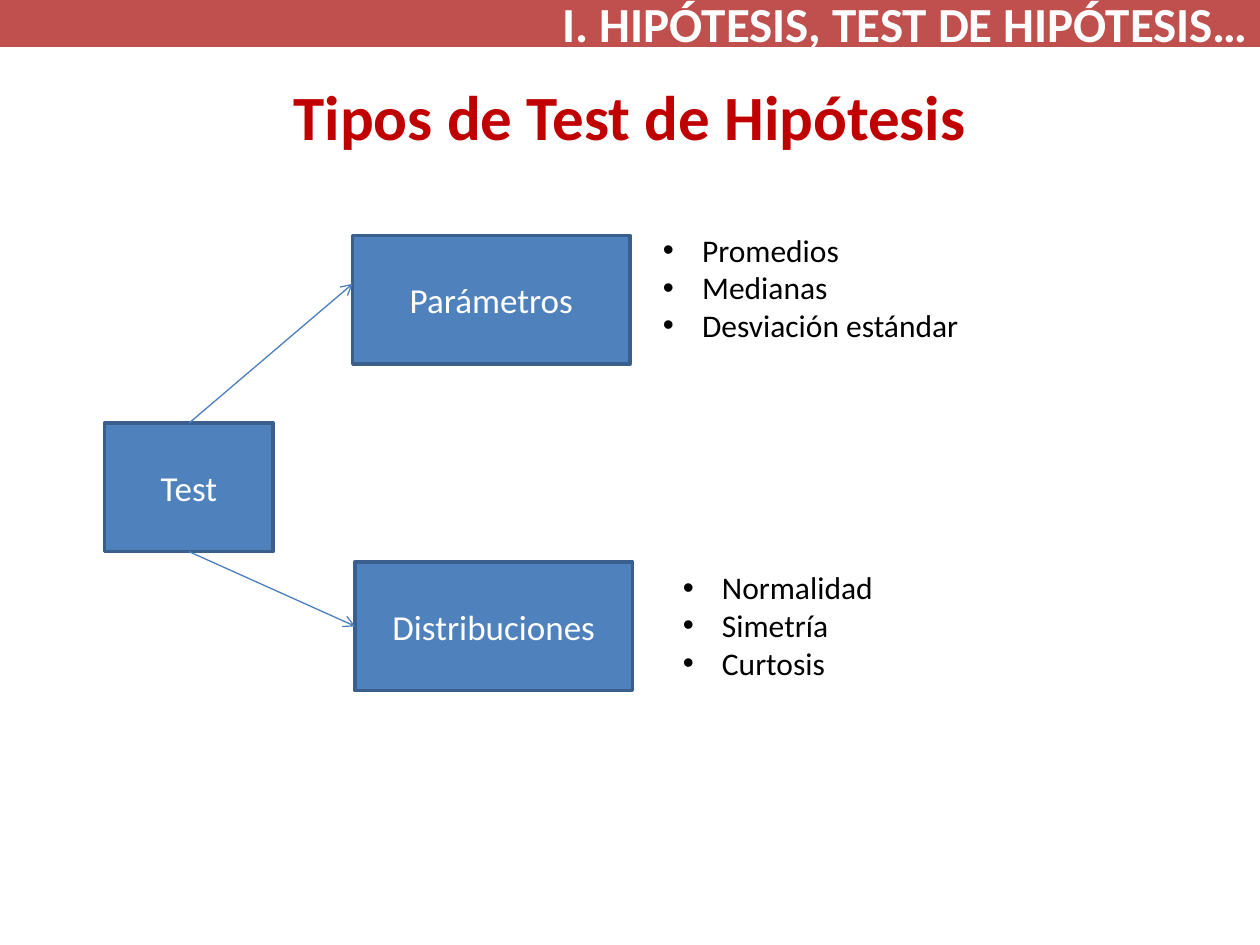
from lxml.etree import SubElement
from pptx import Presentation
from pptx.dml.color import RGBColor
from pptx.enum.shapes import MSO_CONNECTOR, MSO_SHAPE
from pptx.enum.text import MSO_ANCHOR as Anchor, MSO_AUTO_SIZE as AutoSize, PP_ALIGN as Align
from pptx.oxml.ns import qn
from pptx.util import Cm, Pt

# Content
TITLE = "Tipos de Test de Hipótesis"
BANNER = "I. HIPÓTESIS, TEST DE HIPÓTESIS…"
BOXES = {  # label: left, top, width, height in cm
    "Test": (2.11, 8.53, 3.4, 2.59),
    "Parámetros": (7.11, 4.75, 5.59, 2.59),
    "Distribuciones": (7.16, 11.33, 5.59, 2.59),
}
LISTS = [  # left, top in cm, items
    (13.11, 4.52, ["Promedios", "Medianas", "Desviación estándar"]),
    (13.51, 11.33, ["Normalidad", "Simetría", "Curtosis"]),
]
LIST_SIZE = (11.88, 2.57)
COLORS = {"title": "C00000", "box": "4F81BD", "border": "3A5F8C", "arrow": "4B7EBC",
          "banner": "C0504D", "white": "FFFFFF", "black": "000000"}


def color(name):
    return RGBColor.from_string(COLORS[name])


def place(shape, left, top, width, height):
    shape.left, shape.top, shape.width, shape.height = map(Cm, (left, top, width, height))


def write(para, text, size, ink, align, bold=False):
    para.alignment = align
    span = para.add_run()
    span.text = text
    font = span.font
    font.name, font.size, font.bold = "Calibri", Pt(size), bold
    font.color.rgb = color(ink)


def add_box(frame, text, fill, border, size, align=Align.CENTER, bold=False):
    box = page.shapes.add_shape(MSO_SHAPE.RECTANGLE, *map(Cm, frame))
    box.shadow.inherit = False
    box.fill.solid()
    box.fill.fore_color.rgb = color(fill)
    box.line.color.rgb = color(border)
    box.line.width = Pt(2)
    box.text_frame.vertical_anchor = Anchor.MIDDLE
    write(box.text_frame.paragraphs[0], text, size, "white", align, bold)
    return box


def add_arrow(source, side, end_x, end_y):
    arrow = page.shapes.add_connector(MSO_CONNECTOR.STRAIGHT, 0, 0, end_x, end_y)
    arrow.begin_connect(source, side)
    arrow.line.color.rgb = color("arrow")
    arrow.line.width = Pt(0.75)
    SubElement(arrow.line._get_or_add_ln(), qn("a:tailEnd"), type="arrow")
    SubElement(arrow._element.spPr, qn("a:effectLst"))
    return arrow


deck = Presentation()
deck.slide_width, deck.slide_height = Cm(25.4), Cm(19.05)
page = deck.slides.add_slide(deck.slide_layouts[3])  # title and two bodies

# Title
title = page.shapes.title
place(title, 1.27, 0.74, 22.86, 3.18)
title.text_frame.vertical_anchor = Anchor.MIDDLE
write(title.text_frame.paragraphs[0], TITLE, 36, "title", Align.CENTER, bold=True)

# Boxes and arrows
boxes = {label: add_box(frame, label, "box", "border", 20) for label, frame in BOXES.items()}
test, parameters, distributions = boxes.values()
add_arrow(test, 0, parameters.left, Cm(5.72))
add_arrow(test, 2, 0, 0).end_connect(distributions, 1)

# Bulleted lists
for index, (left, top, items) in enumerate(LISTS, start=1):
    body = page.placeholders[index]
    place(body, left, top, *LIST_SIZE)
    frame = body.text_frame
    frame.auto_size = AutoSize.NONE
    for number, item in enumerate(items):
        para = frame.add_paragraph() if number else frame.paragraphs[0]
        para.space_before = Pt(0)
        properties = para._p.get_or_add_pPr()
        properties.set("marL", str(Cm(0.79)))
        properties.set("indent", str(-Cm(0.79)))
        write(para, item, 18, "black", Align.LEFT)

# Top banner
add_box((0, 0, 25.4, 0.91), BANNER, "banner", "banner", 28, Align.RIGHT, bold=True)

deck.save("out.pptx")
